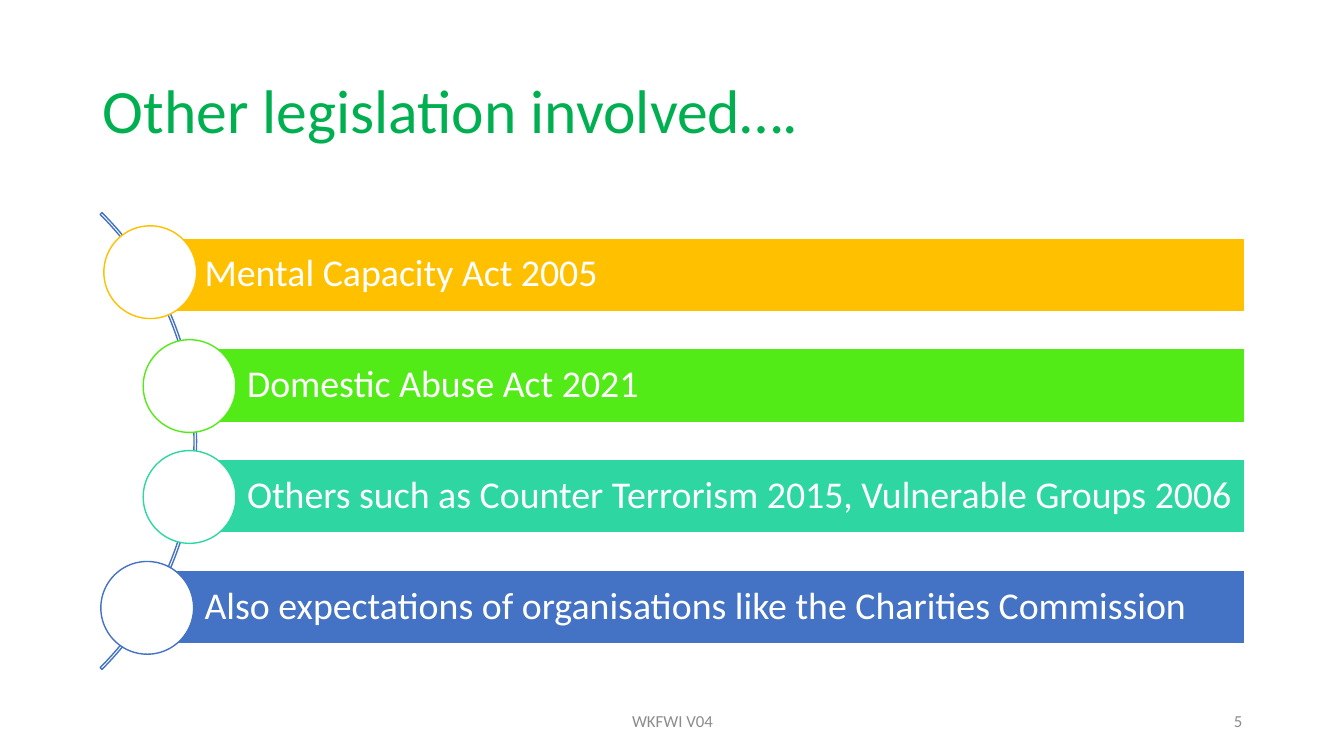
from pptx import Presentation
from pptx.dml.color import RGBColor
from pptx.enum.shapes import MSO_SHAPE
from pptx.enum.text import MSO_ANCHOR, PP_ALIGN
from pptx.util import Pt

PX = 9144  # EMU per px, 100 px to the inch
FONT = "Calibri"
WHITE = RGBColor(0xFF, 0xFF, 0xFF)
GREEN = RGBColor(0x00, 0xB0, 0x50)
GREY = RGBColor(0x8C, 0x8C, 0x8C)
AMBER = RGBColor(0xFF, 0xC0, 0x00)
LIME = RGBColor(0x53, 0xEB, 0x17)
TEAL = RGBColor(0x2E, 0xD7, 0xA1)
BLUE = RGBColor(0x44, 0x72, 0xC4)


def add_shape(kind, x, y, w, h, fill, line):
    sp = s.shapes.add_shape(kind, x * PX, y * PX, w * PX, h * PX)
    sp.shadow.inherit = False
    if fill is None:
        sp.fill.background()
    else:
        sp.fill.solid()
        sp.fill.fore_color.rgb = fill
    sp.line.color.rgb = line
    sp.line.width = Pt(1)
    return sp


def set_text(tf, text, size, color, align):
    tf.word_wrap = True
    tf.vertical_anchor = MSO_ANCHOR.MIDDLE
    p = tf.paragraphs[0]
    p.text = text
    p.alignment = align
    p.font.size = Pt(size)
    p.font.name = FONT
    p.font.color.rgb = color
    return p


prs = Presentation()
prs.slide_width, prs.slide_height = 1333 * PX, 750 * PX
s = prs.slides.add_slide(prs.slide_layouts[5])

# Title
title = s.shapes.title
title.left, title.top, title.width, title.height = 92 * PX, 40 * PX, 1150 * PX, 145 * PX
p = set_text(title.text_frame, "Other legislation involved….", 44, GREEN, PP_ALIGN.LEFT)
p.line_spacing = 0.9

# Arc behind the list
arc = add_shape(MSO_SHAPE.BLOCK_ARC, -446, 117, 641, 641, None, BLUE)
for i, value in enumerate((189, 27, 0.004)):
    arc.adjustments[i] = value

# Bars with their circles: text, colour, bar left, circle left, circle top
ITEMS = [
    ("Mental Capacity Act 2005", AMBER, 145, 103, 224),
    ("Domestic Abuse Act 2021", LIME, 187, 142, 337),
    ("Others such as Counter Terrorism 2015, Vulnerable Groups 2006", TEAL, 187, 142, 447),
    ("Also expectations of organisations like the Charities Commission", BLUE, 145, 100, 557),
]
BAR_TOP, BAR_STEP, BAR_RIGHT = 236, 110, 1235
for i, (text, color, bar_x, circle_x, circle_y) in enumerate(ITEMS):
    bar = add_shape(MSO_SHAPE.RECTANGLE, bar_x, BAR_TOP + i * BAR_STEP,
                    BAR_RIGHT - bar_x, 73, color, WHITE)
    tf = bar.text_frame
    tf.margin_left = 58 * PX
    tf.margin_top = tf.margin_right = tf.margin_bottom = 7 * PX
    p = set_text(tf, text, 27, WHITE, PP_ALIGN.LEFT)
    p.line_spacing = 0.9
    add_shape(MSO_SHAPE.OVAL, circle_x, circle_y, 92, 92, WHITE, color)

# Footer and slide number
for text, x, w, align in (("WKFWI V04", 442, 450, PP_ALIGN.CENTER),
                          ("5", 942, 300, PP_ALIGN.RIGHT)):
    box = s.shapes.add_textbox(x * PX, 695 * PX, w * PX, 40 * PX)
    set_text(box.text_frame, text, 12, GREY, align)

prs.save("out.pptx")
